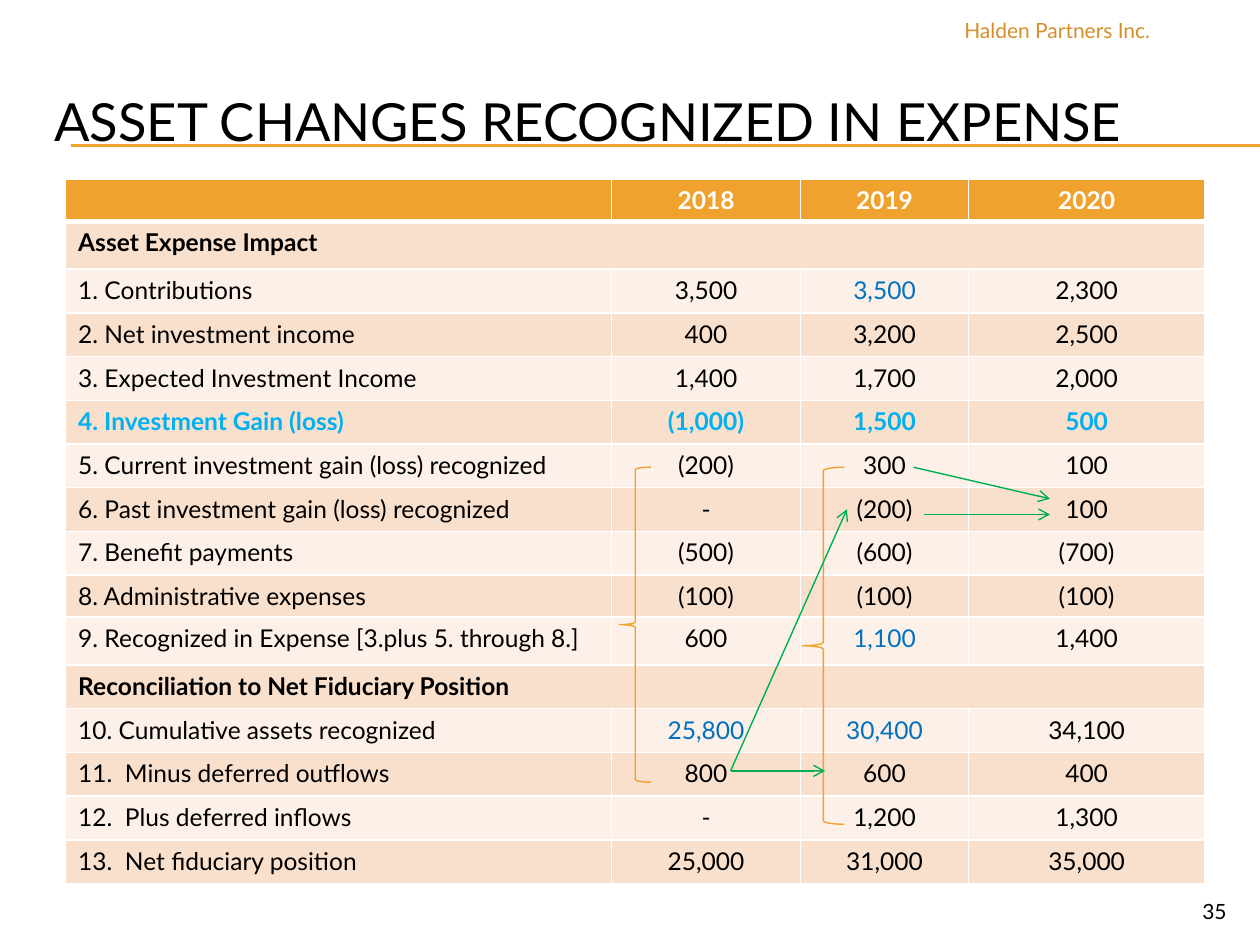
from dataclasses import dataclass

from lxml import etree
from pptx import Presentation
from pptx import util as u
from pptx.dml.color import RGBColor
from pptx.enum import shapes, text
from pptx.oxml.ns import qn

FONT = "Lato"
COLORS = {
    "amber": "F0A22E", "gold": "D48F29", "band": "F9E0CD", "pale": "FCF0E8",
    "black": "000000", "white": "FFFFFF", "blue": "0070C0", "sky": "00B0F0",
    "green": "00B050",
}
LEFT, CENTER, RIGHT = text.PP_ALIGN.LEFT, text.PP_ALIGN.CENTER, text.PP_ALIGN.RIGHT


@dataclass
class Label:
    words: str
    left: float
    top: float
    width: float
    height: float
    size: float
    color: str = "black"
    align: text.PP_ALIGN = RIGHT
    anchor: text.MSO_ANCHOR = text.MSO_ANCHOR.TOP


@dataclass
class Line:
    x1: float
    y1: float
    x2: float
    y2: float
    color: str
    weight: float = 0.79
    arrow: bool = False


@dataclass
class Brace:
    left: float
    top: float
    width: float
    height: float


@dataclass
class Row:
    cells: tuple[str, ...]
    height: float = 25
    color: str = "black"
    bold: bool = False
    blue: tuple[int, ...] = ()  # columns set in blue


ROWS = [
    Row(("", "2018", "2019", "2020"), 23.5, "white", True),
    Row(("Asset Expense Impact",), 27.3, bold=True),
    Row(("1. Contributions", "3,500", "3,500", "2,300"), blue=(2,)),
    Row(("2. Net investment income", "400", "3,200", "2,500")),
    Row(("3. Expected Investment Income", "1,400", "1,700", "2,000")),
    Row(("4. Investment Gain (loss)", "(1,000)", "1,500", "500"), color="sky", bold=True),
    Row(("5. Current investment gain (loss) recognized", "(200)", "300", "100")),
    Row(("6. Past investment gain (loss) recognized", "-", "(200)", "100")),
    Row(("7. Benefit payments", "(500)", "(600)", "(700)")),
    Row(("8. Administrative expenses", "(100)", "(100)", "(100)"), 24),
    Row(("9. Recognized in Expense [3.plus 5. through 8.]", "600", "1,100", "1,400"),
        27.3, blue=(2,)),
    Row(("Reconciliation to Net Fiduciary Position",), bold=True),
    Row(("10. Cumulative assets recognized", "25,800", "30,400", "34,100"), blue=(1, 2)),
    Row(("11.  Minus deferred outflows", "800", "600", "400")),
    Row(("12.  Plus deferred inflows", "-", "1,200", "1,300")),
    Row(("13.  Net fiduciary position", "25,000", "31,000", "35,000")),
]
COLUMNS = (312, 108, 96, 135)

TITLE = Label("ASSET CHANGES RECOGNIZED IN EXPENSE", 24, 36, 684, 66, 30,
              align=LEFT, anchor=text.MSO_ANCHOR.MIDDLE)
FIRM = Label("Halden Partners Inc.", 436.5, 6.5, 228, 23, 12, "gold")
NUMBER = Label("35", 648, 510, 60, 19.5, 12)
RULES = [Line(40.5, y, 720, y, "amber", 0.75) for y in (82.8, 83.5)]
BRACES = [Brace(354, 267, 18, 180), Brace(458.5, 267, 24, 204)]
ARROWS = [
    Line(522, 267, 600, 285, "green", arrow=True),
    Line(528, 294, 600, 294, "green", arrow=True),
    Line(417.5, 440.5, 484, 291, "green", arrow=True),
    Line(417.5, 440.5, 471.5, 440.5, "green", arrow=True),
]


def rgb(name: str) -> RGBColor:
    return RGBColor.from_string(COLORS[name])


def write(frame, words: str, size: float, color: str, align, bold: bool = False) -> None:
    para = frame.paragraphs[0]
    para.text = words
    para.alignment = align
    para.font.size = u.Pt(size)
    for span in para.runs:
        span.font.name = FONT
        span.font.size = u.Pt(size)
        span.font.bold = bold
        span.font.color.rgb = rgb(color)


def add_label(page, label: Label) -> None:
    box = page.shapes.add_textbox(u.Pt(label.left), u.Pt(label.top),
                                  u.Pt(label.width), u.Pt(label.height))
    frame = box.text_frame
    frame.word_wrap = True
    frame.vertical_anchor = label.anchor
    write(frame, label.words, label.size, label.color, label.align)


def add_line(page, line: Line) -> None:
    connector = page.shapes.add_connector(
        shapes.MSO_CONNECTOR.STRAIGHT,
        u.Pt(line.x1), u.Pt(line.y1), u.Pt(line.x2), u.Pt(line.y2))
    connector.line.color.rgb = rgb(line.color)
    connector.line.width = u.Pt(line.weight)
    if line.arrow:
        etree.SubElement(connector.line._get_or_add_ln(), qn("a:tailEnd"), type="arrow")
    etree.SubElement(connector._element.spPr, qn("a:effectLst"))


def add_brace(page, brace: Brace) -> None:
    shape = page.shapes.add_shape(
        shapes.MSO_SHAPE.LEFT_BRACE,
        u.Pt(brace.left), u.Pt(brace.top), u.Pt(brace.width), u.Pt(brace.height))
    shape.shadow.inherit = False
    shape.fill.background()
    shape.line.color.rgb = rgb("amber")
    shape.line.width = u.Pt(0.79)


def set_borders(cell, top: float, bottom: float) -> None:
    properties = cell._tc.get_or_add_tcPr()
    widths = {"a:lnL": 1, "a:lnR": 1, "a:lnT": top, "a:lnB": bottom}
    for index, (tag, width) in enumerate(widths.items()):
        border = etree.Element(qn(tag), w=str(u.Pt(width)))
        fill = etree.SubElement(border, qn("a:solidFill"))
        etree.SubElement(fill, qn("a:srgbClr"), val=COLORS["white"])
        properties.insert(index, border)


def add_asset_table(page) -> None:
    heights = [row.height for row in ROWS]
    table = page.shapes.add_table(len(ROWS), len(COLUMNS), u.Pt(37.5), u.Pt(102.5),
                                  u.Pt(sum(COLUMNS)), u.Pt(sum(heights))).table
    for column, width in zip(table.columns, COLUMNS):
        column.width = u.Pt(width)
    for r, row in enumerate(ROWS):
        table.rows[r].height = u.Pt(row.height)
        fill = "amber" if r == 0 else ("pale", "band")[r % 2]
        for c in range(len(COLUMNS)):
            cell = table.cell(r, c)
            cell.fill.solid()
            cell.fill.fore_color.rgb = rgb(fill)
            set_borders(cell, 3 if r == 1 else 1, 3 if r == 0 else 1)
            write(cell.text_frame, row.cells[c] if c < len(row.cells) else "", 14,
                  "blue" if c in row.blue else row.color,
                  CENTER if c else LEFT, row.bold)
        # Section headings span the whole table
        if len(row.cells) == 1:
            table.cell(r, 0).merge(table.cell(r, len(COLUMNS) - 1))


def main() -> None:
    deck = Presentation()
    deck.slide_width, deck.slide_height = u.Pt(720), u.Pt(540)
    page = deck.slides.add_slide(deck.slide_layouts[6])

    # Title with its double rule
    for rule in RULES:
        add_line(page, rule)
    add_label(page, TITLE)

    # Figures
    add_asset_table(page)
    add_label(page, NUMBER)

    # Braces and arrows over the table
    for brace in BRACES:
        add_brace(page, brace)
    for arrow in ARROWS:
        add_line(page, arrow)

    # Firm name
    add_label(page, FIRM)
    deck.save("out.pptx")


if __name__ == "__main__":
    main()
